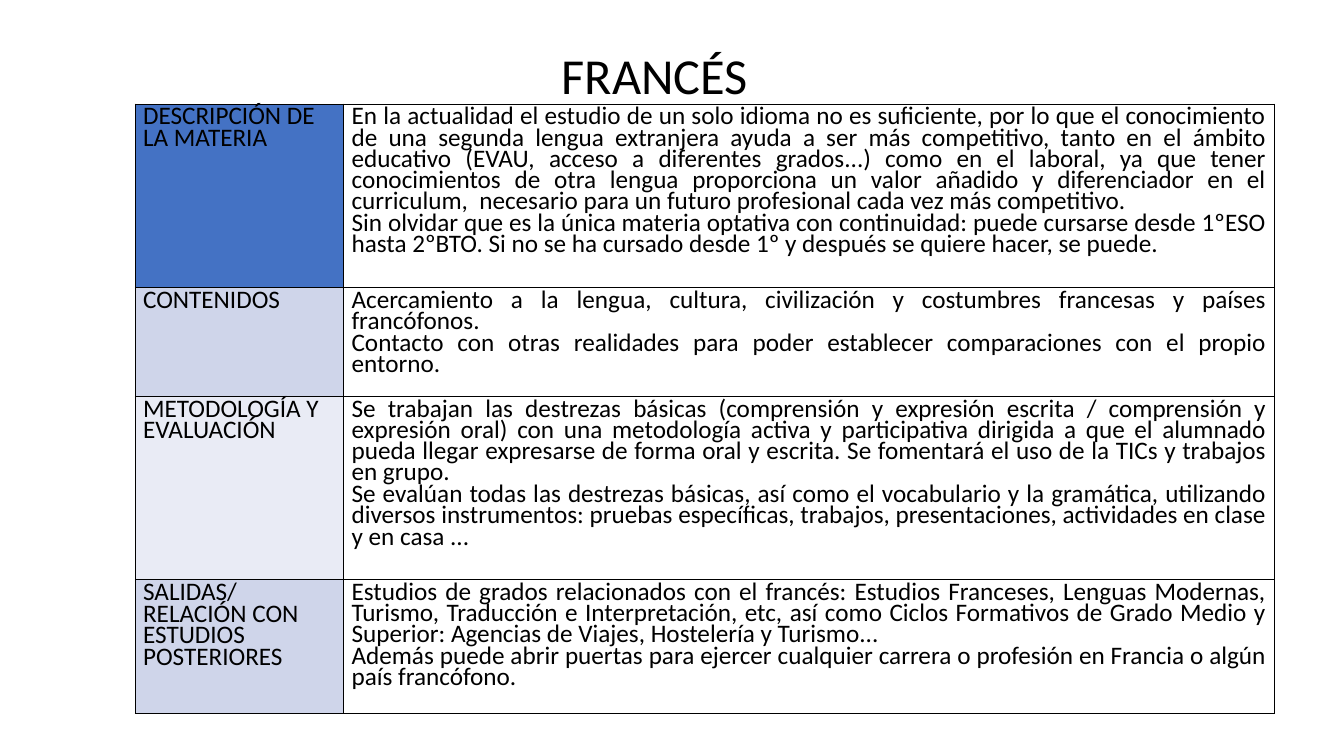
"""Builds the slide that presents the French course as a two-column table."""
from lxml import etree
from pptx import Presentation
from pptx.dml.color import RGBColor
from pptx.enum.text import MSO_ANCHOR, MSO_AUTO_SIZE, PP_ALIGN
from pptx.oxml.ns import qn
from pptx.util import Pt

LEFT, CENTER, JUSTIFY = PP_ALIGN.LEFT, PP_ALIGN.CENTER, PP_ALIGN.JUSTIFY
TOP, NO_FIT = MSO_ANCHOR.TOP, MSO_AUTO_SIZE.NONE

TITLE = "FRANCÉS"
ROWS = [
    (182, "4472C4", ["DESCRIPCIÓN DE LA MATERIA"], [
        "En la actualidad el estudio de un solo idioma no es suficiente, por lo que el conocimiento "
        "de una segunda lengua extranjera ayuda a ser más competitivo, tanto en el ámbito "
        "educativo (EVAU, acceso a diferentes grados...) como en el laboral, ya que tener "
        "conocimientos de otra lengua proporciona un valor añadido y diferenciador en "
        "el curriculum,  necesario para un futuro profesional cada vez más competitivo.",
        "Sin olvidar que es la única materia optativa con continuidad: puede cursarse desde 1ºESO "
        "hasta 2ºBTO. Si no se ha cursado desde 1º y después se quiere hacer, se puede."]),
    (108, "CFD5EA", ["CONTENIDOS"], [
        "Acercamiento a la lengua, cultura, civilización y costumbres francesas y "
        "países francófonos.",
        "Contacto con otras realidades para poder establecer comparaciones con el propio "
        "entorno."]),
    (182, "E9EBF5", ["METODOLOGÍA Y EVALUACIÓN"], [
        "Se trabajan las destrezas básicas (comprensión y expresión escrita / comprensión y "
        "expresión oral) con una metodología activa y participativa dirigida a que el alumnado "
        "pueda llegar expresarse de forma oral y escrita. Se fomentará el uso de la TICs y trabajos "
        "en grupo.",
        "Se evalúan todas las destrezas básicas, así como el vocabulario y la gramática, utilizando "
        "diversos instrumentos: pruebas específicas, trabajos, presentaciones, actividades en clase "
        "y en casa ..."]),
    (133, "CFD5EA", ["SALIDAS/", "RELACIÓN CON ESTUDIOS ", "POSTERIORES"], [
        "Estudios de grados relacionados con el francés: Estudios Franceses, Lenguas Modernas, "
        "Turismo, Traducción e Interpretación, etc, así como Ciclos Formativos de Grado Medio y "
        "Superior: Agencias de Viajes, Hostelería y Turismo...",
        "Además puede abrir puertas para ejercer cualquier carrera o profesión en Francia o algún "
        "país francófono."]),
]
COLUMNS = (207, 924)
TABLE_AT = (134, 103)
TITLE_AT = (392, 39, 516, 70)
MARGIN_X, MARGIN_Y = 8, 4
FONT, INK = "Calibri", "000000"
BORDER_PT = 0.34


def px(n):
    return n * 9144


def color(value):
    return RGBColor.from_string(value)


def write(tf, paragraphs, size=18, align=LEFT, spacing=1.0):
    for i, text in enumerate(paragraphs):
        p = tf.add_paragraph() if i else tf.paragraphs[0]
        p.alignment, p.line_spacing = align, spacing
        p.space_before = p.space_after = Pt(0.2)
        r = p.add_run()
        r.text = text
        r.font.size, r.font.name = Pt(size), FONT
        r.font.bold = False
        r.font.color.rgb = color(INK)


def add_borders(cell):
    tcPr = cell._tc.get_or_add_tcPr()
    for i, side in enumerate(("lnL", "lnR", "lnT", "lnB")):
        ln = etree.Element(qn(f"a:{side}"), w=str(Pt(BORDER_PT)))
        fill = etree.SubElement(ln, qn("a:solidFill"))
        etree.SubElement(fill, qn("a:srgbClr"), val=INK)
        tcPr.insert(i, ln)


def add_title(s):
    sp = s.shapes.title
    sp.left, sp.top, sp.width, sp.height = map(px, TITLE_AT)
    tf = sp.text_frame
    tf.word_wrap, tf.auto_size, tf.vertical_anchor = True, NO_FIT, TOP
    write(tf, [TITLE], size=36, align=CENTER)


def add_course_table(s):
    size = sum(COLUMNS), sum(row[0] for row in ROWS)
    table = s.shapes.add_table(len(ROWS), len(COLUMNS), *map(px, TABLE_AT + size)).table
    table.first_row = table.horz_banding = False
    for column, width in zip(table.columns, COLUMNS):
        column.width = px(width)
    for row, (height, shade, heading, body) in zip(table.rows, ROWS):
        row.height = px(height)
        contents = ((heading, LEFT, shade), (body, JUSTIFY, None))
        for cell, (paragraphs, align, fill) in zip(row.cells, contents):
            cell.margin_left = cell.margin_right = px(MARGIN_X)
            cell.margin_top = cell.margin_bottom = px(MARGIN_Y)
            if fill:
                cell.fill.solid()
                cell.fill.fore_color.rgb = color(fill)
            else:
                cell.fill.background()
            add_borders(cell)
            write(cell.text_frame, paragraphs, align=align, spacing=0.69)


def main():
    prs = Presentation()
    prs.slide_width, prs.slide_height = px(1334), px(750)
    s = prs.slides.add_slide(prs.slide_layouts[5])
    add_title(s)
    add_course_table(s)
    prs.save("out.pptx")


if __name__ == "__main__":
    main()
